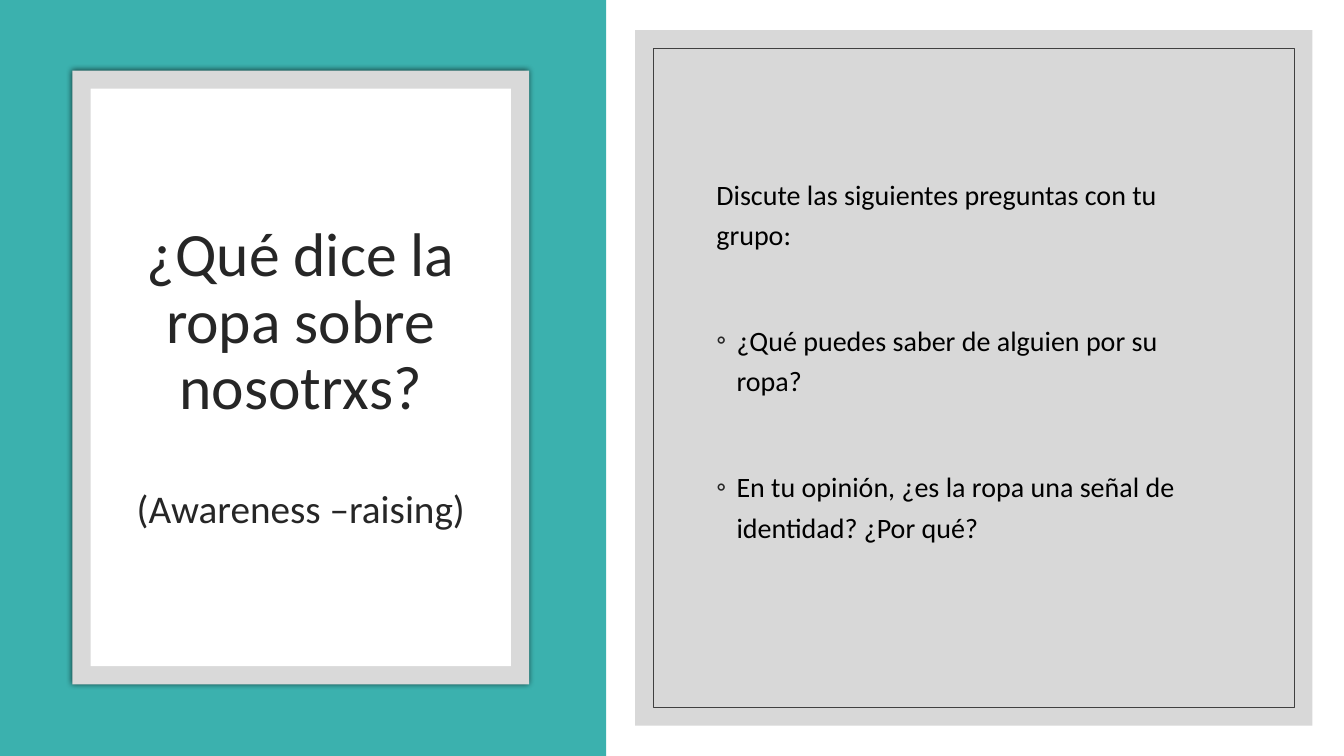
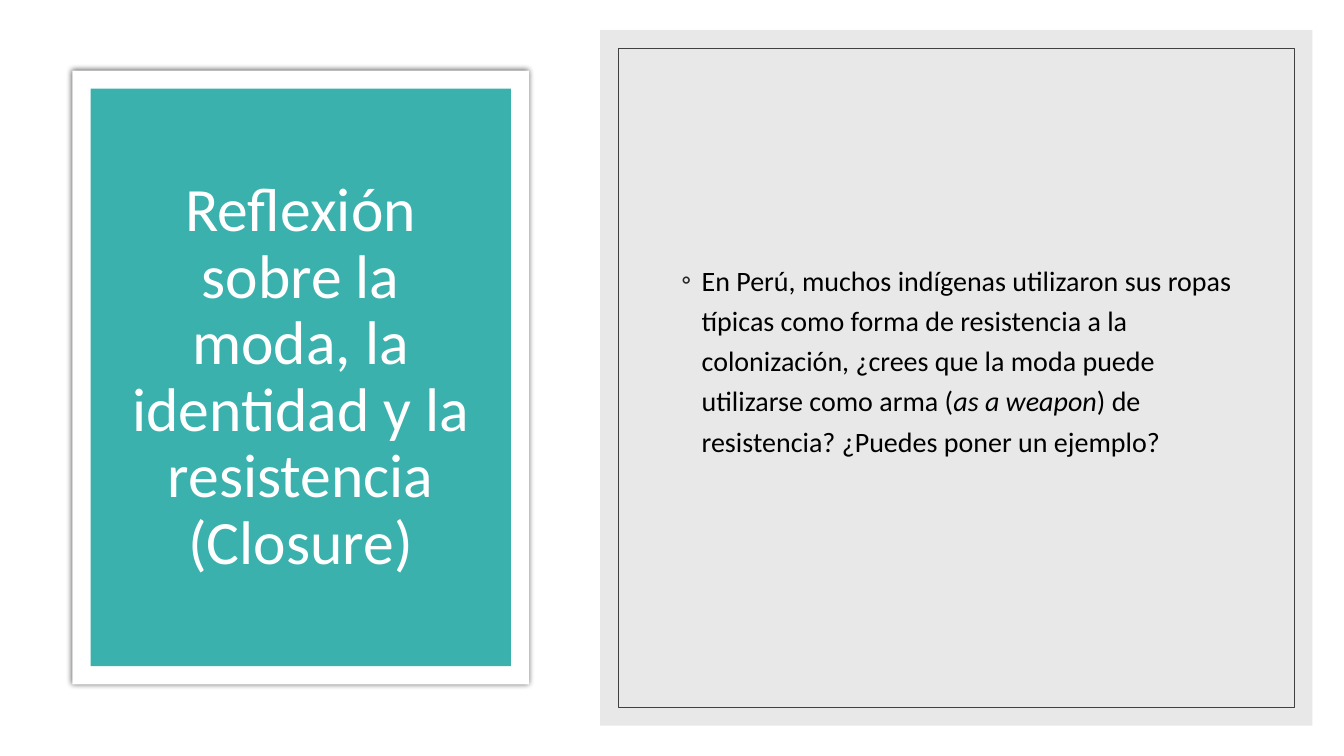
import pptx
import pptx.dml.color
import pptx.enum.shapes
import pptx.enum.text
import pptx.oxml
import pptx.oxml.ns
import pptx.util

Pt = pptx.util.Pt
RGBColor = pptx.dml.color.RGBColor

TEAL = RGBColor(0x3B, 0xB1, 0xAE)
WHITE = RGBColor(0xFF, 0xFF, 0xFF)
BLACK = RGBColor(0, 0, 0)
DARK = RGBColor(0x26, 0x26, 0x26)
BORDER = RGBColor(0x40, 0x40, 0x40)
GREY = RGBColor(0xBF, 0xBF, 0xBF)
LIGHT_GREY = RGBColor(0xD9, 0xD9, 0xD9)
FONT = "Calibri"

SLIDE_W, SLIDE_H = 960, 540
CARD = (51.8, 50.4, 326.2, 438.5)
TITLE_BOX = (77.3, 93.2, 275, 353.5)
INSET = 13
PANEL_TOP, PANEL_RIGHT, PANEL_H = 21.6, 937.4, 496.8
BODY_TOP, BODY_H = 73.4, 392.4
BODY_INDENT = 51
BODY_LIFT = 29
BULLET_INDENT = 14.4

# Title lines: text, size, space before.
# Body paragraphs: bulleted, space before, runs of (text, italic).
SLIDES = [
    {
        "band": 433,
        "card": LIGHT_GREY, "title_fill": WHITE, "title_color": DARK,
        "title": [("¿Qué dice la ropa sobre nosotrxs?", 44, 0),
                  ("(Awareness –raising)", 28, 47.5)],
        "panel_left": 453.6, "panel_fill": GREY, "body_right": 880,
        "body": [
            (False, 0, [("Discute las siguientes preguntas con tu grupo:", False)]),
            (True, 47, [("¿Qué puedes saber de alguien por su ropa?", False)]),
            (True, 47, [("En tu opinión, ¿es la ropa una señal de identidad? ¿Por qué?", False)]),
        ],
    },
    {
        "band": 0,
        "card": WHITE, "title_fill": TEAL, "title_color": WHITE,
        "title": [("Reflexión sobre la moda, la identidad y la resistencia", 44, 0),
                  ("(Closure)", 44, 0)],
        "panel_left": 428.7, "panel_fill": LIGHT_GREY, "body_right": 888,
        "body": [
            (True, 0, [("En Perú, muchos indígenas utilizaron sus ropas típicas como forma "
                        "de resistencia a la colonización, ¿crees que la moda puede "
                        "utilizarse como arma (", False),
                       ("as a weapon", True),
                       (") de resistencia? ¿Puedes poner un ejemplo?", False)]),
        ],
    },
]


def inset(box):
    x, y, w, h = box
    return x + INSET, y + INSET, w - 2 * INSET, h - 2 * INSET


def add_rect(s, box, fill=None, line=None):
    sp = s.shapes.add_shape(pptx.enum.shapes.MSO_SHAPE.RECTANGLE, *map(Pt, box))
    sp.shadow.inherit = False
    if fill is None:
        sp.fill.background()
    else:
        sp.fill.solid()
        sp.fill.fore_color.rgb = fill
    if line is None:
        sp.line.fill.background()
    else:
        sp.line.color.rgb = line
        sp.line.width = Pt(0.5)
    return sp


def add_glow_shadow(sp):
    """Give the shape a soft shadow on all sides."""
    effects = sp._element.spPr.find(pptx.oxml.ns.qn("a:effectLst"))
    effects.append(pptx.oxml.parse_xml(
        f'<a:outerShdw {pptx.oxml.ns.nsdecls("a")} blurRad="{Pt(4)}" dist="0" dir="0" '
        'algn="ctr" rotWithShape="0"><a:srgbClr val="000000"><a:alpha val="66000"/>'
        '</a:srgbClr></a:outerShdw>'))


def set_opacity(sp, percent):
    color = sp._element.spPr.find(".//" + pptx.oxml.ns.qn("a:srgbClr"))
    color.append(pptx.oxml.parse_xml(
        f'<a:alpha {pptx.oxml.ns.nsdecls("a")} val="{percent * 1000}"/>'))


def set_bullet(p):
    pPr = p._p.get_or_add_pPr()
    pPr.set("marL", str(Pt(BULLET_INDENT)))
    pPr.set("indent", str(-Pt(BULLET_INDENT)))
    ns = pptx.oxml.ns.nsdecls("a")
    bullet = (f'<a:buClr {ns}><a:srgbClr val="{DARK}"/></a:buClr>',
              f'<a:buFont {ns} typeface="{FONT}"/>',
              f'<a:buChar {ns} char="◦"/>')
    defaults = pPr.find(pptx.oxml.ns.qn("a:defRPr"))
    for xml in bullet:
        defaults.addprevious(pptx.oxml.parse_xml(xml))


def add_text_frame(s, box):
    tf = s.shapes.add_textbox(*map(Pt, box)).text_frame
    tf.word_wrap = True
    tf.vertical_anchor = pptx.enum.text.MSO_ANCHOR.MIDDLE
    return tf


def add_paragraph(tf, index, size, color, spacing, before):
    p = tf.add_paragraph() if index else tf.paragraphs[0]
    p.font.name = FONT
    p.font.size = Pt(size)
    p.font.color.rgb = color
    p.line_spacing = spacing
    p.space_before = Pt(before)
    return p


def add_title_card(s, data):
    add_glow_shadow(add_rect(s, CARD, data["card"]))
    add_rect(s, inset(CARD), data["title_fill"])
    tf = add_text_frame(s, TITLE_BOX)
    for i, (text, size, before) in enumerate(data["title"]):
        p = add_paragraph(tf, i, size, data["title_color"], 0.9, before)
        p.alignment = pptx.enum.text.PP_ALIGN.CENTER
        p.add_run().text = text


def add_body_panel(s, data):
    left = data["panel_left"]
    panel = (left, PANEL_TOP, PANEL_RIGHT - left, PANEL_H)
    set_opacity(add_rect(s, panel, data["panel_fill"]), 60)
    add_rect(s, inset(panel), line=BORDER)
    body_left = left + BODY_INDENT
    body_w = data["body_right"] - body_left
    tf = add_text_frame(s, (body_left, BODY_TOP, body_w, BODY_H - BODY_LIFT))
    for i, (bulleted, before, runs) in enumerate(data["body"]):
        p = add_paragraph(tf, i, 20, BLACK, 1.2, before)
        if bulleted:
            set_bullet(p)
        for text, italic in runs:
            r = p.add_run()
            r.text = text
            if italic:
                r.font.italic = True


def main():
    prs = pptx.Presentation()
    prs.slide_width, prs.slide_height = Pt(SLIDE_W), Pt(SLIDE_H)
    for data in SLIDES:
        s = prs.slides.add_slide(prs.slide_layouts[6])
        if data["band"]:
            add_rect(s, (0, 0, data["band"], SLIDE_H), TEAL)
        add_title_card(s, data)
        add_body_panel(s, data)
    prs.save("out.pptx")


if __name__ == "__main__":
    main()
